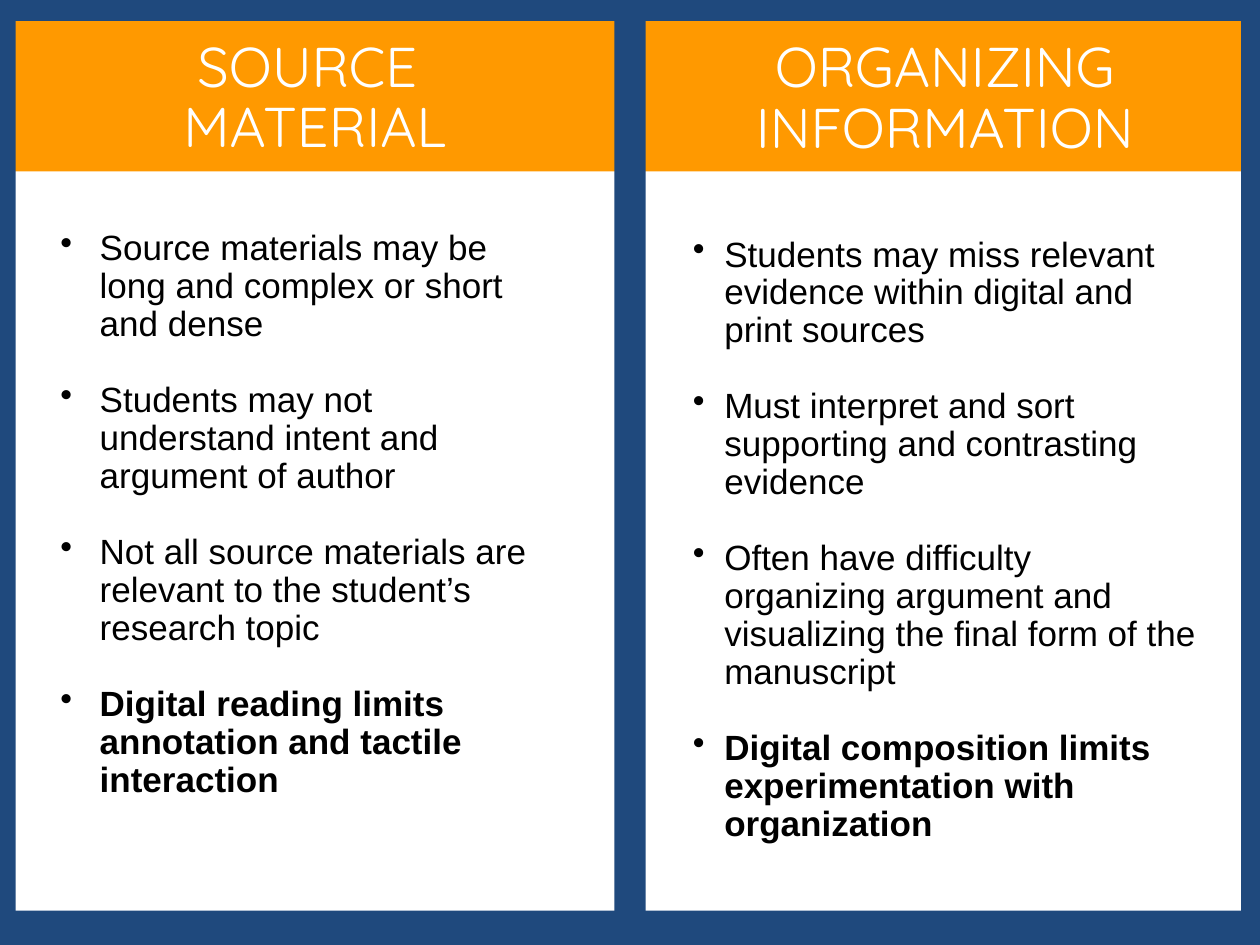
from dataclasses import dataclass

from lxml import etree
from pptx import Presentation
from pptx.dml.color import RGBColor
from pptx.enum.shapes import MSO_SHAPE
from pptx.enum.text import MSO_ANCHOR, MSO_AUTO_SIZE, PP_ALIGN
from pptx.oxml.ns import qn
from pptx.util import Pt

RECTANGLE = MSO_SHAPE.RECTANGLE
TOP, MIDDLE = MSO_ANCHOR.TOP, MSO_ANCHOR.MIDDLE
LEFT, CENTER = PP_ALIGN.LEFT, PP_ALIGN.CENTER
NO_AUTOFIT = MSO_AUTO_SIZE.NONE


@dataclass(frozen=True)
class Theme:
    band: RGBColor = RGBColor(0xFF, 0x99, 0x00)
    frame: RGBColor = RGBColor(0x1F, 0x49, 0x7D)
    heading: RGBColor = RGBColor(0xFF, 0xFF, 0xFF)
    body: RGBColor = RGBColor(0, 0, 0)
    heading_font: str = "Quicksand"
    body_font: str = "Arial"
    heading_size: int = 32
    body_size: int = 20


theme = Theme()


def write_text(shape, paragraphs, *, font, size, color, align=LEFT, anchor=TOP,
               indent=0, before=0, after=0, bold_last=False):
    """Fill a shape with paragraphs; a positive indent gives them hanging bullets."""
    frame = shape.text_frame
    frame.word_wrap = True
    frame.auto_size = NO_AUTOFIT
    frame.vertical_anchor = anchor
    for index, text in enumerate(paragraphs):
        paragraph = frame.add_paragraph() if index else frame.paragraphs[0]
        paragraph.text = text
        paragraph.alignment = align
        paragraph.line_spacing = 0.9
        paragraph.space_before = Pt(before if index else 0)
        paragraph.space_after = Pt(after)
        if indent:
            properties = paragraph._p.get_or_add_pPr()
            properties.set("marL", str(Pt(indent)))
            properties.set("indent", str(-Pt(indent)))
            etree.SubElement(properties, qn("a:buChar")).set("char", "•")
        paragraph.font.name = font
        paragraph.font.size = Pt(size)
        paragraph.font.color.rgb = color
        paragraph.font.bold = bold_last and index == len(paragraphs) - 1
        for run in paragraph.runs:
            run.font.name = font
            run.font.size = Pt(size)
            run.font.color.rgb = color
            run.font.bold = paragraph.font.bold


def add_block(shapes, bounds, color):
    block = shapes.add_shape(RECTANGLE, *map(Pt, bounds))
    block.shadow.inherit = False
    block.fill.solid()
    block.fill.fore_color.rgb = color
    block.line.fill.background()
    return block


deck = Presentation()
deck.slide_width, deck.slide_height = Pt(720), Pt(540)
slide = deck.slides.add_slide(deck.slide_layouts[5])
shapes = slide.shapes

# Headings over the orange band
source_heading = shapes.title
header_band = add_block(shapes, (0, -1.5, 720, 99.5), theme.band)
source_heading.element.addprevious(header_band.element)

source_heading.left, source_heading.top = Pt(0), Pt(7.2)
source_heading.width, source_heading.height = Pt(360), Pt(99.4)
organizing_heading = shapes.add_textbox(Pt(360), Pt(7.2), Pt(360), Pt(99.4))

for heading, wording in (
    (source_heading, "SOURCE \vMATERIAL"),
    (organizing_heading, "ORGANIZING INFORMATION"),
):
    write_text(heading, [wording], font=theme.heading_font, size=theme.heading_size,
               color=theme.heading, align=CENTER, anchor=MIDDLE)

# Bulleted challenges: bounds, hanging indent, points
challenges = [
    ((27.4, 128.2, 295.2, 364.3), 22.5, [
        "Source materials may be long and complex or short and dense",
        "Students may not understand intent and argument of author",
        "Not all source materials are relevant to the student’s research topic",
        "Digital reading limits annotation and tactile interaction",
    ]),
    ((388.8, 131.8, 303.1, 342.7), 18, [
        "Students may miss relevant evidence within digital and print sources",
        "Must interpret and sort supporting and contrasting evidence",
        "Often have difficulty organizing argument and visualizing the final form "
        "of the manuscript",
        "Digital composition limits experimentation with organization",
    ]),
]
for bounds, indent, points in challenges:
    write_text(shapes.add_textbox(*map(Pt, bounds)), points, font=theme.body_font,
               size=theme.body_size, color=theme.body, indent=indent,
               before=10, after=12, bold_last=True)

# Blue frame: three uprights, then the top and bottom rails
for left in (351, -9, 709.2):
    add_block(shapes, (left, 0, 18, 540), theme.frame)
for left, top in ((-9, -9), (-3, 520.3)):
    add_block(shapes, (left, top, 729, 21), theme.frame)

deck.save("out.pptx")
